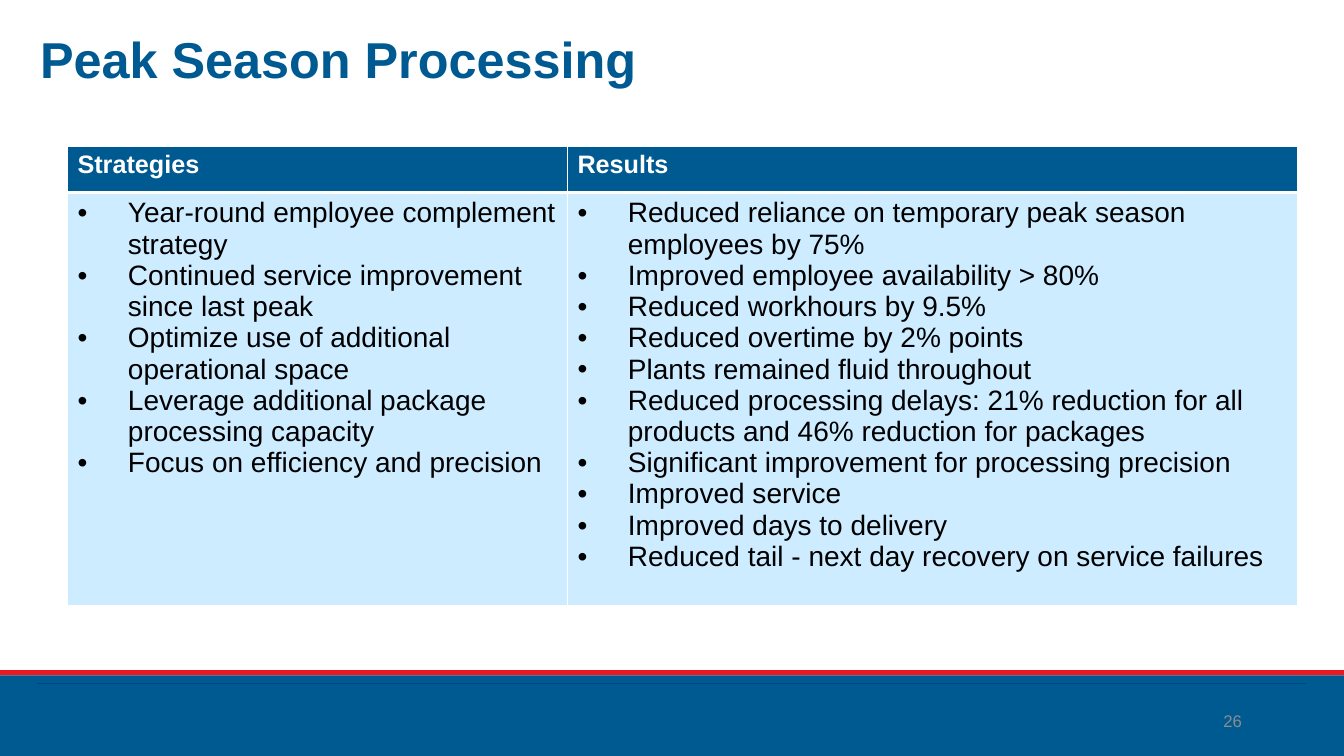
from dataclasses import dataclass

from lxml.etree import SubElement
from pptx import Presentation
from pptx.dml.color import RGBColor
from pptx.enum.shapes import MSO_CONNECTOR, MSO_SHAPE
from pptx.enum.text import MSO_ANCHOR, PP_ALIGN
from pptx.oxml import parse_xml
from pptx.oxml.ns import nsdecls, qn
from pptx.slide import Slide
from pptx.table import _Cell
from pptx.util import Cm, Pt

BLUE = RGBColor(0x00, 0x5A, 0x92)
DARK_BLUE = RGBColor(0x00, 0x42, 0x87)
PALE_BLUE = RGBColor(0xBD, 0xE6, 0xFF)
RED = RGBColor(0xE7, 0x19, 0x21)
GREY = RGBColor(0x8C, 0x8C, 0x8C)
WHITE = RGBColor(0xFF, 0xFF, 0xFF)
BLACK = RGBColor(0x00, 0x00, 0x00)

SLIDE_W, SLIDE_H = 33.87, 19.05
HEADER_H, BODY_H = 1.17, 10.41
BULLET_INDENT = Cm(1.27)

TITLE_FONT = {"name": "Arial", "size": Pt(36), "bold": True}
NUMBER_FONT = {"name": "Arial", "size": Pt(12)}
HEADER_FONT = {"name": "Arial", "size": Pt(18), "bold": True}
BODY_FONT = {"name": "Arial", "size": Pt(20), "bold": False}


@dataclass
class Band:
    top: float
    height: float
    color: RGBColor


@dataclass
class Label:
    text: str
    box: tuple[float, float, float, float]
    font: dict
    color: RGBColor
    paragraph: dict
    anchor: MSO_ANCHOR


@dataclass
class Column:
    heading: str
    width: float
    points: list[str]


BANDS = [Band(16.89, 0.13, RED), Band(17.02, 2.03, BLUE)]

LABELS = [
    Label("Peak Season Processing", (0.76, 0.76, 31.52, 1.65), TITLE_FONT, BLUE,
          {"line_spacing": 0.9}, MSO_ANCHOR.TOP),
    Label("26", (23.93, 17.65, 7.62, 1.02), NUMBER_FONT, GREY,
          {"alignment": PP_ALIGN.RIGHT}, MSO_ANCHOR.MIDDLE),
]

COLUMNS = [
    Column("Strategies", 12.6, [
        "Year-round employee complement strategy",
        "Continued service improvement since last peak",
        "Optimize use of additional operational space",
        "Leverage additional package processing capacity",
        "Focus on efficiency and precision",
    ]),
    Column("Results", 18.39, [
        "Reduced reliance on temporary peak season employees by 75%",
        "Improved employee availability > 80%",
        "Reduced workhours by 9.5%",
        "Reduced overtime by 2% points",
        "Plants remained fluid throughout",
        "Reduced processing delays: 21% reduction for all products and 46% reduction for packages",
        "Significant improvement for processing precision",
        "Improved service",
        "Improved days to delivery",
        "Reduced tail - next day recovery on service failures",
    ]),
]


def set_format(target: object, values: dict) -> None:
    for name, value in values.items():
        setattr(target, name, value)


def add_run(p, text: str, font: dict, color: RGBColor) -> None:
    r = p.add_run()
    r.text = text
    set_format(r.font, font)
    r.font.color.rgb = color


def add_band(s: Slide, band: Band) -> None:
    sp = s.shapes.add_shape(MSO_SHAPE.RECTANGLE, 0, Cm(band.top), Cm(SLIDE_W), Cm(band.height))
    sp.shadow.inherit = False
    sp.fill.solid()
    sp.fill.fore_color.rgb = band.color
    sp.line.fill.background()


def add_label(s: Slide, label: Label) -> None:
    tf = s.shapes.add_textbox(*map(Cm, label.box)).text_frame
    set_format(tf, {"word_wrap": True, "vertical_anchor": label.anchor})
    p = tf.paragraphs[0]
    set_format(p, label.paragraph)
    add_run(p, label.text, label.font, label.color)


def add_footer_rule(s: Slide) -> None:
    line = s.shapes.add_connector(MSO_CONNECTOR.STRAIGHT, Cm(0.94), Cm(17.22), Cm(32.92), Cm(17.22))
    line.line.color.rgb = DARK_BLUE
    line.line.width = Pt(0.5)
    SubElement(line._element.spPr, qn("a:effectLst"))


def style_cell(cell: _Cell, color: RGBColor, top: int, bottom: int, opacity: int = 100) -> None:
    """Fill the cell and give it white borders; widths are in points."""
    cell.fill.solid()
    cell.fill.fore_color.rgb = color
    tc_pr = cell._tc.get_or_add_tcPr()
    if opacity < 100:
        SubElement(tc_pr.find(".//" + qn("a:srgbClr")), qn("a:alpha"), val=str(opacity * 1000))
    for i, (side, width) in enumerate({"L": 1, "R": 1, "T": top, "B": bottom}.items()):
        tc_pr.insert(i, parse_xml(
            f'<a:ln{side} {nsdecls("a")} w="{Pt(width)}"><a:solidFill>'
            f'<a:srgbClr val="{WHITE}"/></a:solidFill></a:ln{side}>'))


def add_bullet(p) -> None:
    p_pr = p._p.get_or_add_pPr()
    p_pr.set("marL", str(BULLET_INDENT))
    p_pr.set("indent", str(-BULLET_INDENT))
    SubElement(p_pr, qn("a:buFont"), typeface="Arial")
    SubElement(p_pr, qn("a:buChar"), char="•")


def add_comparison(s: Slide, columns: list[Column]) -> None:
    width = sum(c.width for c in columns)
    table = s.shapes.add_table(2, len(columns), Cm(1.7), Cm(3.68), Cm(width),
                               Cm(HEADER_H + BODY_H)).table
    for row, height in zip(table.rows, (HEADER_H, BODY_H)):
        row.height = Cm(height)
    for i, column in enumerate(columns):
        table.columns[i].width = Cm(column.width)
        header, body = table.cell(0, i), table.cell(1, i)
        style_cell(header, BLUE, top=1, bottom=3)
        style_cell(body, PALE_BLUE, top=3, bottom=1, opacity=75)
        add_run(header.text_frame.paragraphs[0], column.heading, HEADER_FONT, WHITE)
        tf = body.text_frame
        for n, point in enumerate(column.points):
            p = tf.add_paragraph() if n else tf.paragraphs[0]
            add_bullet(p)
            add_run(p, point, BODY_FONT, BLACK)


def main() -> None:
    prs = Presentation()
    prs.slide_width, prs.slide_height = Cm(SLIDE_W), Cm(SLIDE_H)
    s = prs.slides.add_slide(prs.slide_layouts[6])
    for band in BANDS:
        add_band(s, band)
    add_footer_rule(s)
    for label in LABELS:
        add_label(s, label)
    add_comparison(s, COLUMNS)
    prs.save("out.pptx")


if __name__ == "__main__":
    main()
